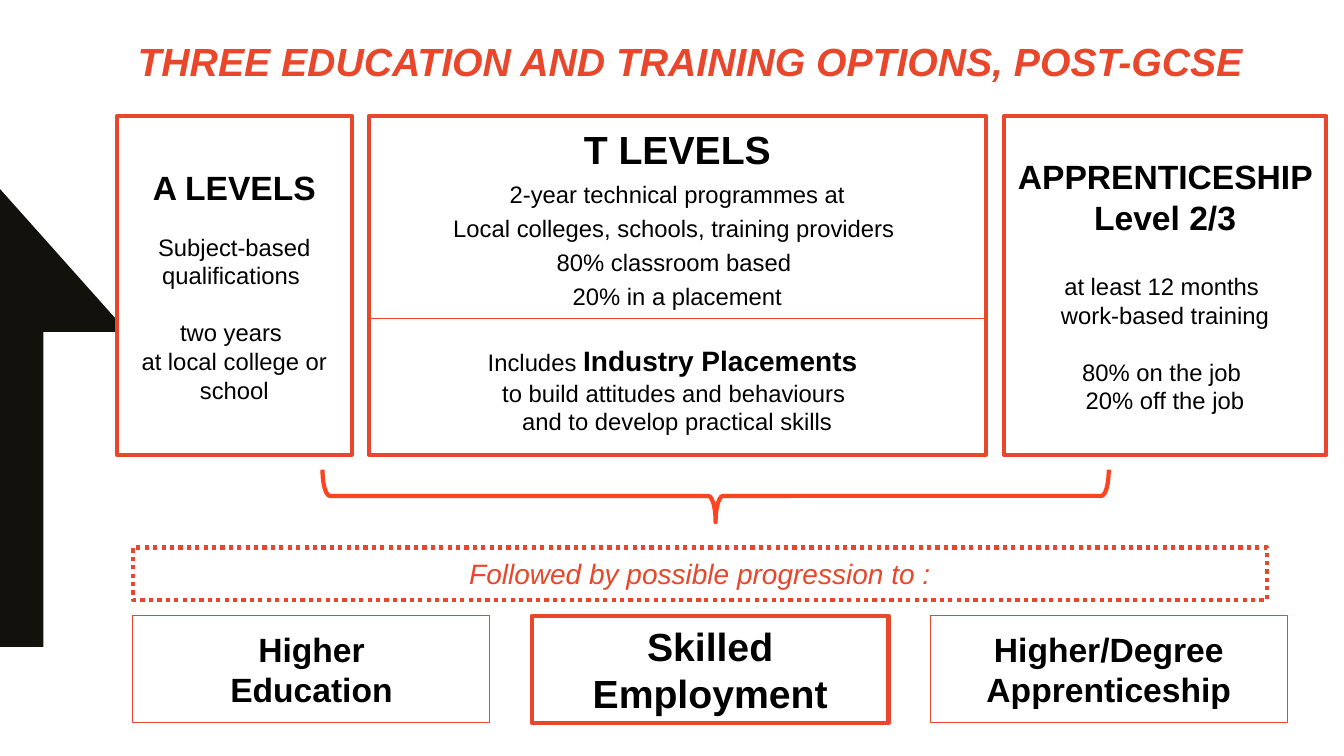
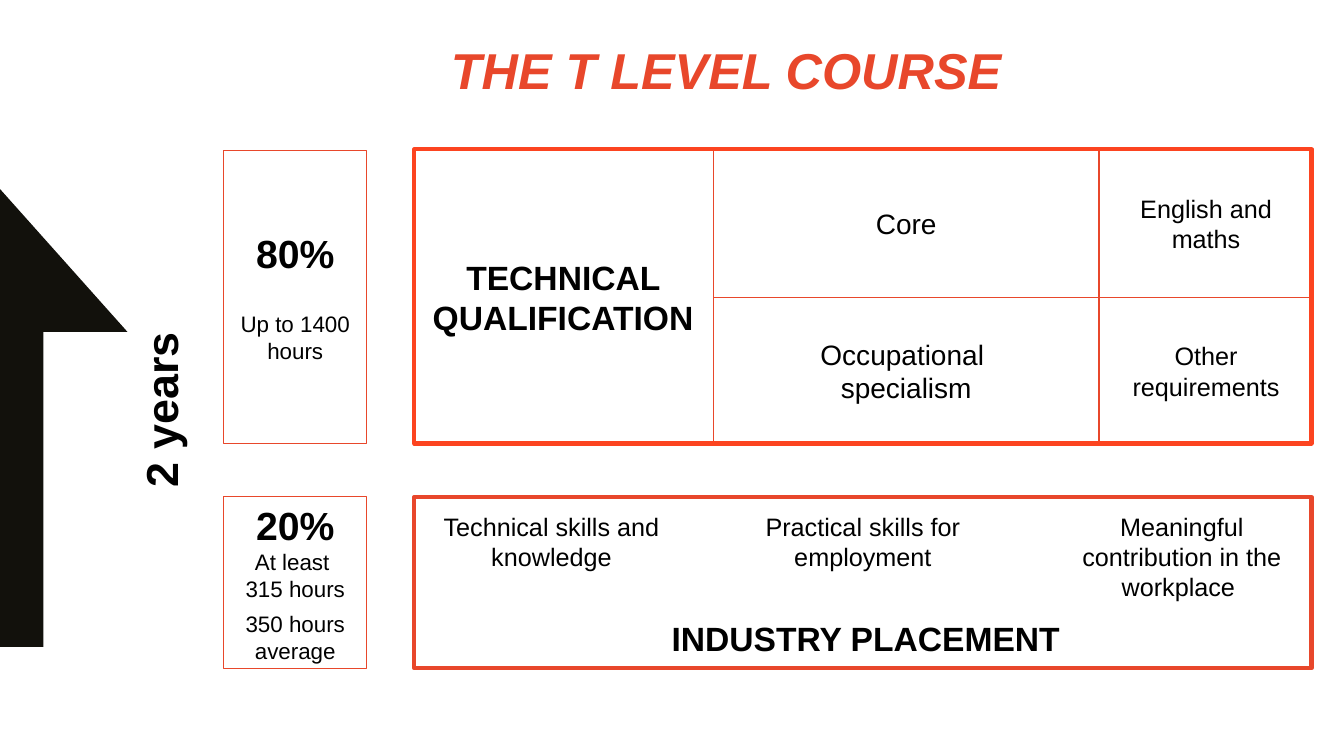
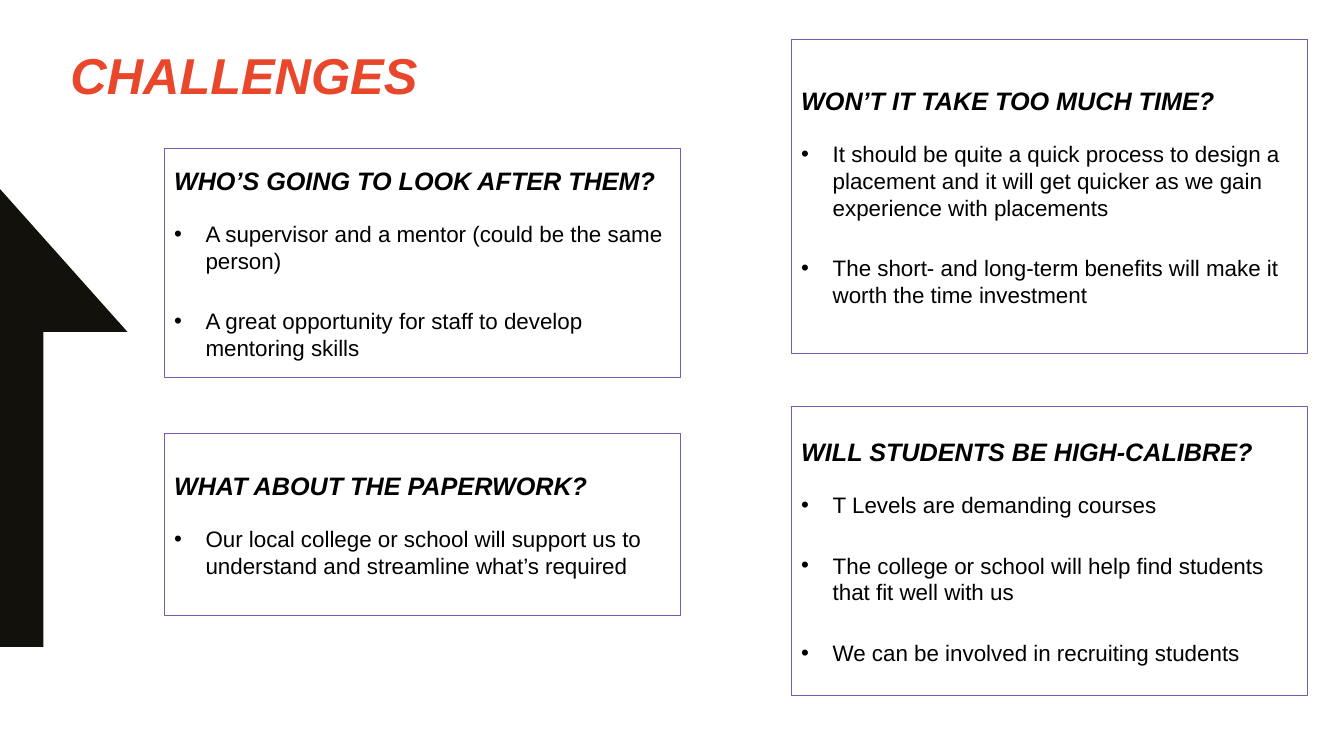
"""Build three slides on post-GCSE options, the T Level course and its challenges."""
from dataclasses import dataclass

from lxml.etree import SubElement
from pptx import Presentation
from pptx.dml.color import RGBColor
from pptx.enum.dml import MSO_LINE
from pptx.enum.shapes import MSO_SHAPE
from pptx.enum.text import MSO_ANCHOR, PP_ALIGN
from pptx.oxml.ns import qn
from pptx.presentation import Presentation as Deck
from pptx.slide import Slide
from pptx.util import Pt

FONT = "Arial"
RED = "E8472B"
BRIGHT_RED = "FC4420"
PURPLE = "765AB0"
BLACK = "000000"
INK = "12110C"
WHITE = "FFFFFF"
THIN, THICK = 0.75, 3
HANGING = 22.5
ARROW = [(31, 237), (91, 237), (0, 135), (0, 462), (31, 462)]


@dataclass(frozen=True)
class Span:
    text: str
    size: float
    bold: bool = False


@dataclass(frozen=True)
class Line:
    text: str
    size: float
    bold: bool = False
    italic: bool = False
    before: float = 0
    after: float = 0
    color: str = BLACK
    bullet: bool = False
    spans: tuple[Span, ...] = ()


@dataclass(frozen=True)
class Panel:
    left: float
    top: float
    width: float
    height: float
    lines: tuple[Line, ...] = ()
    outline: str = ""
    weight: float = THIN
    fill: str = ""
    dotted: bool = False
    middle: bool = True
    centred: bool = True
    inset: float = 3.6
    turn: float = 0


def rgb(color: str) -> RGBColor:
    return RGBColor.from_string(color)


def write_line(paragraph, line: Line, centred: bool) -> None:
    paragraph.alignment = PP_ALIGN.CENTER if centred else PP_ALIGN.LEFT
    paragraph.space_before = Pt(line.before)
    paragraph.space_after = Pt(line.after)
    if line.bullet:
        properties = paragraph._p.get_or_add_pPr()
        properties.set("marL", str(Pt(HANGING)))
        properties.set("indent", str(-Pt(HANGING)))
        SubElement(properties, qn("a:buFont")).set("typeface", FONT)
        SubElement(properties, qn("a:buChar")).set("char", "•")
    font = paragraph.font
    font.name = FONT
    font.size = Pt(line.size)
    font.bold = line.bold
    font.italic = line.italic
    font.color.rgb = rgb(line.color)
    if line.text:
        paragraph.add_run().text = line.text
    for span in line.spans:
        run = paragraph.add_run()
        run.text = span.text
        run.font.size = Pt(span.size)
        run.font.bold = span.bold


def draw(slide: Slide, panel: Panel) -> None:
    place = [Pt(v) for v in (panel.left, panel.top, panel.width, panel.height)]
    if panel.outline or panel.fill:
        shape = slide.shapes.add_shape(MSO_SHAPE.RECTANGLE, *place)
        shape.shadow.inherit = False
        paint(shape, panel.fill, panel.outline, panel.weight)
        if panel.dotted:
            shape.line.dash_style = MSO_LINE.ROUND_DOT
    else:
        shape = slide.shapes.add_textbox(*place)
    shape.rotation = panel.turn
    frame = shape.text_frame
    frame.word_wrap = True
    frame.margin_top = Pt(panel.inset)
    frame.vertical_anchor = MSO_ANCHOR.MIDDLE if panel.middle else MSO_ANCHOR.TOP
    for index, line in enumerate(panel.lines):
        paragraph = frame.add_paragraph() if index else frame.paragraphs[0]
        write_line(paragraph, line, panel.centred)


def paint(shape, fill: str, outline: str, weight: float = THIN) -> None:
    if fill:
        shape.fill.solid()
        shape.fill.fore_color.rgb = rgb(fill)
    else:
        shape.fill.background()
    if outline:
        shape.line.color.rgb = rgb(outline)
        shape.line.width = Pt(weight)
    else:
        shape.line.fill.background()


def titled_slide(deck: Deck, title: str, size: float, left: float, top: float,
                 width: float, centred: bool = True) -> Slide:
    slide = deck.slides.add_slide(deck.slide_layouts[6])
    builder = slide.shapes.build_freeform(*ARROW[0], scale=float(Pt(1)))
    builder.add_line_segments(ARROW[1:], close=True)
    arrow = builder.convert_to_shape()
    arrow.shadow.inherit = False
    paint(arrow, INK, "")
    heading = Line(title, size, bold=True, italic=True, color=RED)
    draw(slide, Panel(left, top, width, 47.5, (heading,), middle=False,
                      centred=centred, inset=6.6 if centred else 3.6))
    return slide


def add_options(deck: Deck) -> None:
    slide = titled_slide(deck, "THREE EDUCATION AND TRAINING OPTIONS, POST-GCSE",
                         28, 60.5, 20.2, 864.7)
    top, height, split = 82.8, 242, 144.7
    left, width = 263.5, 440.6
    a_levels = (
        Line("A LEVELS", 24, bold=True, after=18),
        Line("Subject-based qualifications ", 17, after=20.4),
        Line("two years ", 17),
        Line("at local college or school", 17),
    )
    apprenticeship = (
        Line("APPRENTICESHIP Level 2/3", 24, bold=True, after=25),
        Line("at least 12 months ", 17),
        Line("work-based training", 17, after=20.4),
        Line("80% on the job ", 17),
        Line("20% off the job", 17),
    )
    t_levels = (Line("T LEVELS", 28, bold=True, after=3),) + tuple(
        Line(text, 17, before=2, after=2) for text in (
            "2-year technical programmes at",
            "Local colleges, schools, training providers ",
            "80% classroom based ",
            "20% in a placement",
        ))
    placements = (
        Line("Includes ", 17, spans=(Span("Industry Placements", 20, True), Span(" ", 24))),
        Line("to build attitudes and behaviours ", 17),
        Line("and to develop practical skills", 17),
    )
    panels = [
        Panel(83.5, top, 167.8, height, a_levels, RED, THICK, WHITE),
        Panel(717, top, 230.4, height, apprenticeship, RED, THICK),
        Panel(left, top, width, split, t_levels, RED, middle=False, inset=6.6),
        Panel(left, top + split, width, height - split, placements, RED),
        Panel(left, top, width, height, outline=RED, weight=THICK),
        Panel(95, 391, 810, 37.4,
              (Line("Followed by possible progression to :", 20, italic=True, color=RED),),
              RED, THICK, dotted=True),
    ]
    progressions = [
        (("Higher", "Education"), 24, THIN),
        (("Skilled", "Employment"), 28, THICK),
        (("Higher/Degree Apprenticeship",), 24, THIN),
    ]
    for index, (texts, size, weight) in enumerate(progressions):
        lines = tuple(Line(text, size, bold=True) for text in texts)
        panels.append(Panel(95 + 284.75 * index, 440, 255, 76.3, lines, RED, weight))
    for panel in panels:
        draw(slide, panel)
    brace = slide.shapes.add_shape(MSO_SHAPE.LEFT_BRACE, Pt(492.5), Pt(73.4), Pt(37.4), Pt(561.6))
    brace.shadow.inherit = False
    brace.rotation = 270
    brace.adjustments[0] = 0.14
    paint(brace, "", BRIGHT_RED, THICK)


def add_course(deck: Deck) -> None:
    slide = titled_slide(deck, "THE T LEVEL COURSE", 36, 128.2, 21.6, 781.2)
    left, width = 296, 640.8
    study_top, study_height = 107.3, 209.5
    work_top, work_height = 355, 122.4
    study_hours = (
        Line("80%", 28, bold=True, after=24),
        Line("Up to 1400 hours", 16),
    )
    work_hours = (
        Line("20%", 28, bold=True),
        Line("At least ", 16),
        Line("315 hours", 16, after=6),
        Line("350 hours average", 16),
    )
    panels = [
        Panel(159.8, study_top, 102.2, study_height, study_hours, RED),
        Panel(159.8, work_top, 102.2, work_height, work_hours, RED),
        Panel(left, study_top, 212.4, study_height,
              (Line("TECHNICAL QUALIFICATION", 24, bold=True),)),
        Panel(14.5, 275.8, 200, 33.8, (Line("2 years", 32, bold=True),), turn=270),
    ]
    columns = [
        (509.8, 275, 20, (("Core",), ("Occupational ", "specialism"))),
        (785.5, 152, 18, (("English and maths",), ("Other requirements",))),
    ]
    for cell_left, cell_width, size, cells in columns:
        for row, texts in enumerate(cells):
            lines = tuple(Line(text, size) for text in texts)
            panels.append(Panel(cell_left, study_top + 105.1 * row, cell_width, 105.1, lines, RED))
    panels += [
        Panel(298, 430.6, width, 49.7, (Line("INDUSTRY PLACEMENT", 24, bold=True),), fill=WHITE),
        Panel(left, 106.6, width, 210.2, outline=BRIGHT_RED, weight=THICK),
        Panel(left, work_top, width, work_height, outline=RED, weight=THICK),
    ]
    skills = [
        (left, 195.8, "Technical skills and knowledge"),
        (517, 198.7, "Practical skills for employment"),
        (751.7, 185, "Meaningful contribution in the workplace "),
    ]
    for skill_left, skill_width, text in skills:
        panels.append(Panel(skill_left, 361.4, skill_width, 60, (Line(text, 18),), middle=False))
    for panel in panels:
        draw(slide, panel)


def add_challenges(deck: Deck) -> None:
    slide = titled_slide(deck, "CHALLENGES", 36, 43.2, 28.1, 368.6, centred=False)
    left, right = 117.2, 565.2
    challenges = [
        (left, 105.8, 164.2, "WHO’S GOING TO LOOK AFTER THEM?", (
            "A supervisor and a mentor (could be the same person)",
            "A great opportunity for staff to develop mentoring skills")),
        (right, 28.1, 224.6, "WON’T IT TAKE TOO MUCH TIME?", (
            "It should be quite a quick process to design a placement and it will "
            "get quicker as we gain experience with placements",
            "The short- and long-term benefits will make it worth the time investment")),
        (right, 290.2, 206.6, "WILL STUDENTS BE HIGH-CALIBRE?", (
            "T Levels are demanding courses",
            "The college or school will help find students that fit well with us",
            "We can be involved in recruiting students")),
        (left, 309.6, 130.3, "WHAT ABOUT THE PAPERWORK?", (
            "Our local college or school will support us to understand and "
            "streamline what’s required",)),
    ]
    for box_left, top, height, question, answers in challenges:
        lines = (Line(question, 18, bold=True, italic=True, after=6),) + tuple(
            Line(answer, 16, before=12, after=12, bullet=True) for answer in answers)
        draw(slide, Panel(box_left, top, 368.6, height, lines, PURPLE, centred=False))


def main() -> None:
    deck = Presentation()
    deck.slide_width, deck.slide_height = Pt(960), Pt(540)
    add_options(deck)
    add_course(deck)
    add_challenges(deck)
    deck.save("out.pptx")


if __name__ == "__main__":
    main()
